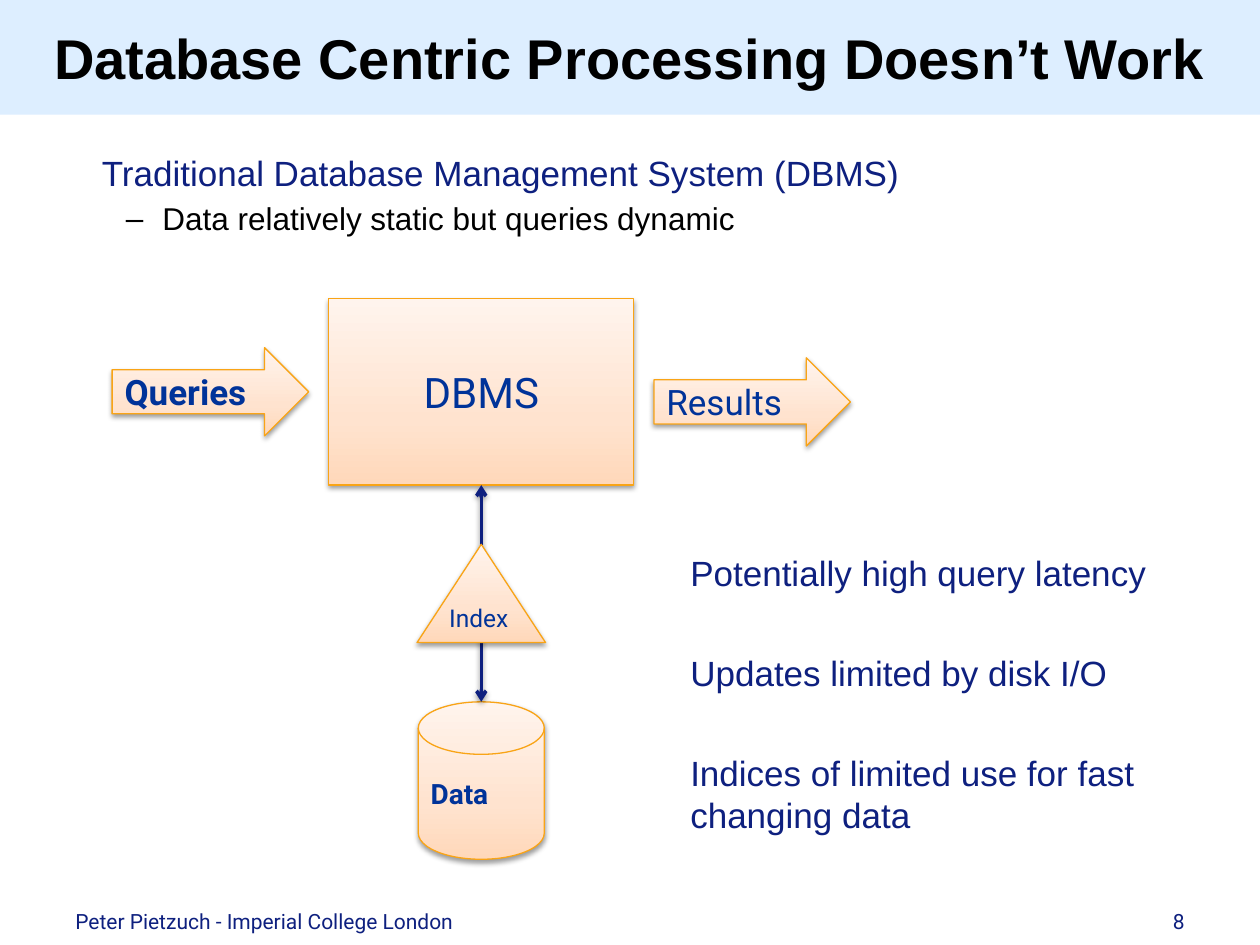
from copy import deepcopy
from dataclasses import dataclass

from lxml.etree import SubElement
from pptx import Presentation
from pptx.dml.color import RGBColor
from pptx.enum.shapes import MSO_CONNECTOR, MSO_SHAPE
from pptx.enum.text import MSO_ANCHOR, PP_ALIGN
from pptx.oxml.ns import qn
from pptx.util import Inches, Pt

COLORS = {
    "banner": "DDEEFF", "black": "000000", "navy": "0E207F", "blue": "003399",
    "edge": "F9A416", "low": "FFD8BA", "mid": "FFE3CF", "high": "FFF4ED",
}


@dataclass
class Part:
    text: str
    kind: MSO_SHAPE
    box: tuple
    size: int = 20
    bold: bool = False
    align: PP_ALIGN = PP_ALIGN.LEFT
    inset: float | None = None


def color(name: str) -> RGBColor:
    return RGBColor.from_string(COLORS[name])


def write(frame, text: str, *, size: int, tone: str = "navy", font: str = "Arial",
          bold: bool = False, align=PP_ALIGN.LEFT, before: float = 0,
          left: float = 0, hang: float = 0, bullet: str = "") -> None:
    """Fill the first empty paragraph, or add one after the text."""
    para = frame.add_paragraph() if frame.text else frame.paragraphs[0]
    props = para._p.get_or_add_pPr()
    props.set("marL", str(Inches(left)))
    props.set("indent", str(Inches(-hang)))
    para.alignment = align
    para.space_before = Pt(before)
    if bullet:
        SubElement(props, qn("a:buFont"), typeface="Arial")
        SubElement(props, qn("a:buChar"), char=bullet)
    else:
        SubElement(props, qn("a:buNone"))
    run = para.add_run()
    run.text = text
    run.font.name, run.font.size, run.font.bold = font, Pt(size), bold
    run.font.color.rgb = color(tone)


def add_box(slide, *box: float):
    frame = slide.shapes.add_textbox(*map(Inches, box)).text_frame
    frame.word_wrap = True
    return frame


def add_shadow(props) -> None:
    """Put a soft drop shadow into the shape properties."""
    effects = props.find(qn("a:effectLst"))
    if effects is None:
        effects = SubElement(props, qn("a:effectLst"))
    shadow = SubElement(effects, qn("a:outerShdw"), blurRad=str(Pt(3.1)),
                        dist=str(Pt(1.6)), dir="5400000", rotWithShape="0")
    tint = SubElement(shadow, qn("a:srgbClr"), val=COLORS["black"])
    SubElement(tint, qn("a:alpha"), val="38000")


def shade(shape) -> None:
    """Peach gradient, darkest at the bottom."""
    fill = shape.fill
    fill.gradient()
    fill.gradient_angle = 90
    stops = shape._element.spPr.find(".//" + qn("a:gsLst"))
    stops.insert(1, deepcopy(stops[0]))
    for stop, (spot, name) in zip(
            fill.gradient_stops, [(0, "low"), (0.35, "mid"), (1, "high")]):
        stop.position = spot
        stop.color.rgb = color(name)


def add_part(slide, part: Part):
    shape = slide.shapes.add_shape(part.kind, *map(Inches, part.box))
    shade(shape)
    shape.line.color.rgb = color("edge")
    shape.line.width = Pt(0.75)
    shape.shadow.inherit = False
    add_shadow(shape._element.spPr)
    frame = shape.text_frame
    frame.word_wrap = True
    frame.vertical_anchor = MSO_ANCHOR.MIDDLE
    if part.inset is not None:
        frame.margin_left = frame.margin_right = Inches(part.inset)
        frame.margin_top = frame.margin_bottom = Inches(part.inset)
    write(frame, part.text, size=part.size, tone="blue", font="Roboto",
          bold=part.bold, align=part.align)
    return shape


def add_link(slide, start, end: tuple) -> None:
    """Two-headed arrow from the bottom of a rectangle to a point."""
    x, y = map(Inches, end)
    link = slide.shapes.add_connector(MSO_CONNECTOR.STRAIGHT, x, y, x, y)
    link.begin_connect(start, 2)
    link.line.color.rgb = color("navy")
    link.line.width = Pt(2)
    line = link.line._get_or_add_ln()
    for tip in ("a:headEnd", "a:tailEnd"):
        SubElement(line, qn(tip), type="arrow")
    add_shadow(link._element.spPr)


def main() -> None:
    deck = Presentation()
    deck.slide_width, deck.slide_height = Inches(10), Inches(7.5)
    slide = deck.slides.add_slide(deck.slide_layouts[6])

    # Title banner
    banner = slide.shapes.add_shape(
        MSO_SHAPE.RECTANGLE, 0, 0, deck.slide_width, Inches(0.91))
    banner.shadow.inherit = False
    banner.fill.solid()
    banner.fill.fore_color.rgb = color("banner")
    banner.line.fill.background()
    banner.text_frame.vertical_anchor = MSO_ANCHOR.MIDDLE
    write(banner.text_frame, "Database Centric Processing Doesn’t Work",
          size=32, tone="black", bold=True, align=PP_ALIGN.CENTER)

    # Introduction
    intro = add_box(slide, 0.51, 1.15, 8.98, 0.9)
    write(intro, "Traditional Database Management System (DBMS)", size=20, left=0.2)
    write(intro, "Data relatively static but queries dynamic", size=18,
          tone="black", before=3.6, left=0.68, hang=0.29, bullet="–")

    # Diagram, with the link behind the index
    engine = add_part(slide, Part("DBMS", MSO_SHAPE.RECTANGLE, (2.61, 2.37, 2.42, 1.48),
                                  size=24, align=PP_ALIGN.CENTER))
    add_part(slide, Part("Data", MSO_SHAPE.FLOWCHART_MAGNETIC_DISK,
                         (3.32, 5.57, 1, 1.25), size=16, bold=True))
    add_link(slide, engine, (3.82, 5.57))
    for part in (
        Part("Queries", MSO_SHAPE.RIGHT_ARROW, (0.89, 2.76, 1.56, 0.7), bold=True),
        Part("Results", MSO_SHAPE.RIGHT_ARROW, (5.19, 2.84, 1.56, 0.7)),
        Part("Index", MSO_SHAPE.ISOSCELES_TRIANGLE, (3.31, 4.32, 1.02, 0.78),
             size=14, inset=0),
    ):
        add_part(slide, part)

    # Drawbacks
    notes = add_box(slide, 5.37, 4.33, 4.19, 2.49)
    for row, text in enumerate((
        "Potentially high query latency",
        "Updates limited by disk I/O",
        "Indices of limited use for fast changing data",
    )):
        write(notes, text, size=20, left=0.01, before=33 if row else 0)

    # Footer
    write(add_box(slide, 0.5, 7.16, 6.06, 0.28),
          "Peter Pietzuch - Imperial College London", size=12, font="Roboto")
    write(add_box(slide, 7.42, 7.16, 2.08, 0.28), "8", size=12, font="Roboto",
          align=PP_ALIGN.RIGHT)

    deck.save("out.pptx")


if __name__ == "__main__":
    main()
